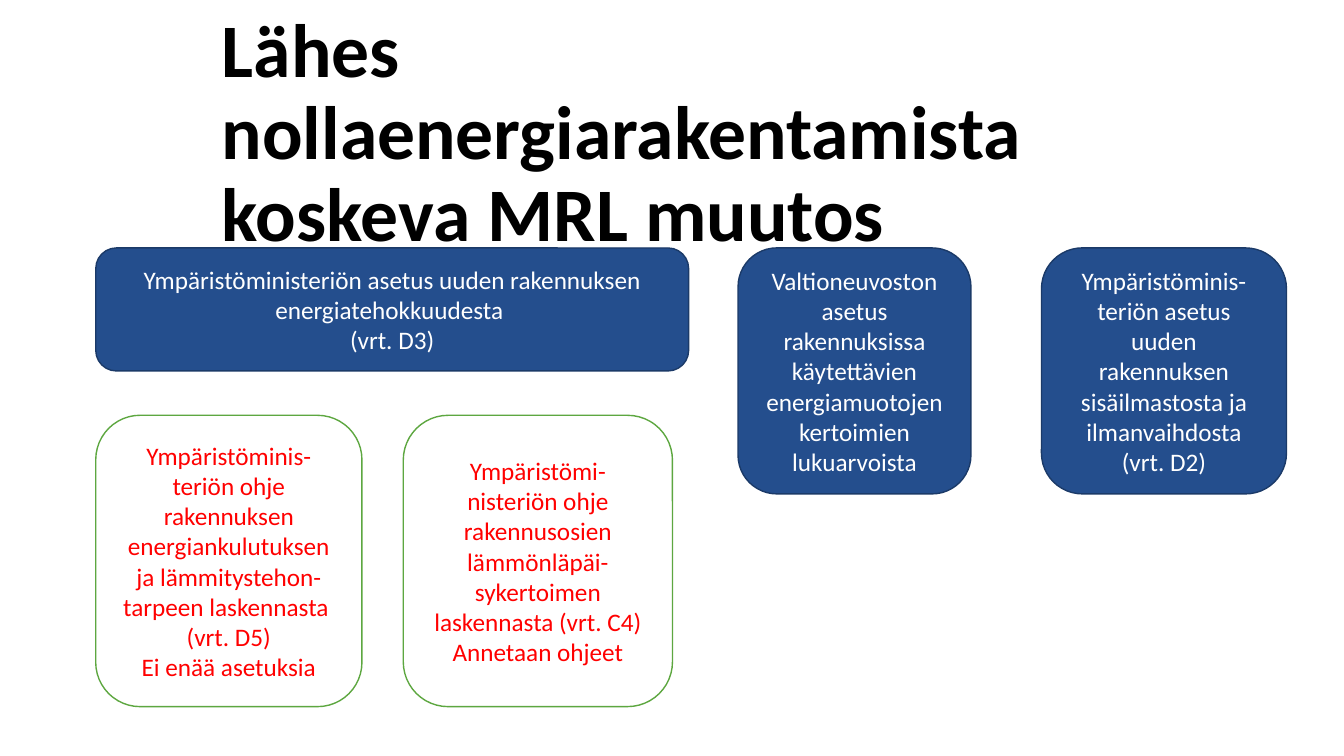
from pptx import Presentation
from pptx.dml.color import RGBColor
from pptx.enum.shapes import MSO_SHAPE
from pptx.enum.text import MSO_ANCHOR, MSO_AUTO_SIZE, PP_ALIGN
from pptx.util import Inches, Pt


def paint(code):
    """Turn a hex string into a colour."""
    return RGBColor.from_string(code)


def write(frame, text, size=18, color="000000", bold=False,
          align=PP_ALIGN.LEFT, space=1.0, face="Calibri"):
    """Fill a text frame, one paragraph per line of text."""
    frame.text = text
    frame.word_wrap = True
    frame.auto_size = MSO_AUTO_SIZE.NONE
    frame.vertical_anchor = MSO_ANCHOR.MIDDLE
    for para in frame.paragraphs:
        para.alignment = align
        para.line_spacing = space
        para.font.name = face
        para.font.size = Pt(size)
        para.font.bold = bold
        para.font.color.rgb = paint(color)


class Deck:
    """Hold the box styles and the current slide."""

    decree = {"fill": "244E8D", "line": "1B3A68", "color": "FFFFFF"}
    guide = {"fill": "FFFFFF", "line": "5DA740", "color": "FF0000"}

    def __init__(self):
        """Start a wide deck with one title-only slide."""
        self.file = Presentation()
        self.file.slide_width = Inches(13.33)
        self.file.slide_height = Inches(7.5)
        self.slide = self.file.slides.add_slide(self.file.slide_layouts[5])

    def title(self, text, left, top, width, height):
        """Place and format the title placeholder."""
        head = self.slide.shapes.title
        head.left, head.top = Inches(left), Inches(top)
        head.width, head.height = Inches(width), Inches(height)
        write(head.text_frame, text, size=54, bold=True, space=0.9)

    def box(self, text, left, top, width, height, style):
        """Add a rounded box with centred text."""
        box = self.slide.shapes.add_shape(
            MSO_SHAPE.ROUNDED_RECTANGLE, Inches(left), Inches(top),
            Inches(width), Inches(height))
        box.shadow.inherit = False
        box.fill.solid()
        box.fill.fore_color.rgb = paint(style["fill"])
        box.line.color.rgb = paint(style["line"])
        box.line.width = Pt(1)
        write(box.text_frame, text, color=style["color"],
              align=PP_ALIGN.CENTER)


def main():
    """Build the slide and save it."""
    deck = Deck()
    deck.title("Lähes nollaenergiarakentamista koskeva MRL muutos",
               2.1, 0, 9.57, 2.68)

    decrees = [
        ("Ympäristöministeriön asetus uuden rakennuksen "
         "energiatehokkuudesta \n(vrt. D3)", 0.95, 5.88, 1.22),
        ("Valtioneuvoston asetus rakennuksissa käytettävien "
         "energiamuotojen kertoimien lukuarvoista", 7.32, 2.31, 2.44),
        ("Ympäristöminis-teriön asetus uuden rakennuksen "
         "sisäilmastosta ja ilmanvaihdosta (vrt. D2)", 10.33, 2.43, 2.44),
    ]
    for text, left, width, height in decrees:
        deck.box(text, left, 2.46, width, height, deck.decree)

    guides = [
        ("Ympäristöminis-teriön ohje rakennuksen energiankulutuksen "
         "ja lämmitystehon-tarpeen laskennasta \n(vrt. D5)\n"
         "Ei enää asetuksia", 0.95, 2.64),
        ("Ympäristömi-nisteriön ohje rakennusosien lämmönläpäi-sykertoimen "
         "laskennasta (vrt. C4)\nAnnetaan ohjeet", 4, 2.67),
    ]
    for text, left, width in guides:
        deck.box(text, left, 4.12, width, 2.89, deck.guide)

    deck.file.save("out.pptx")


if __name__ == "__main__":
    main()
